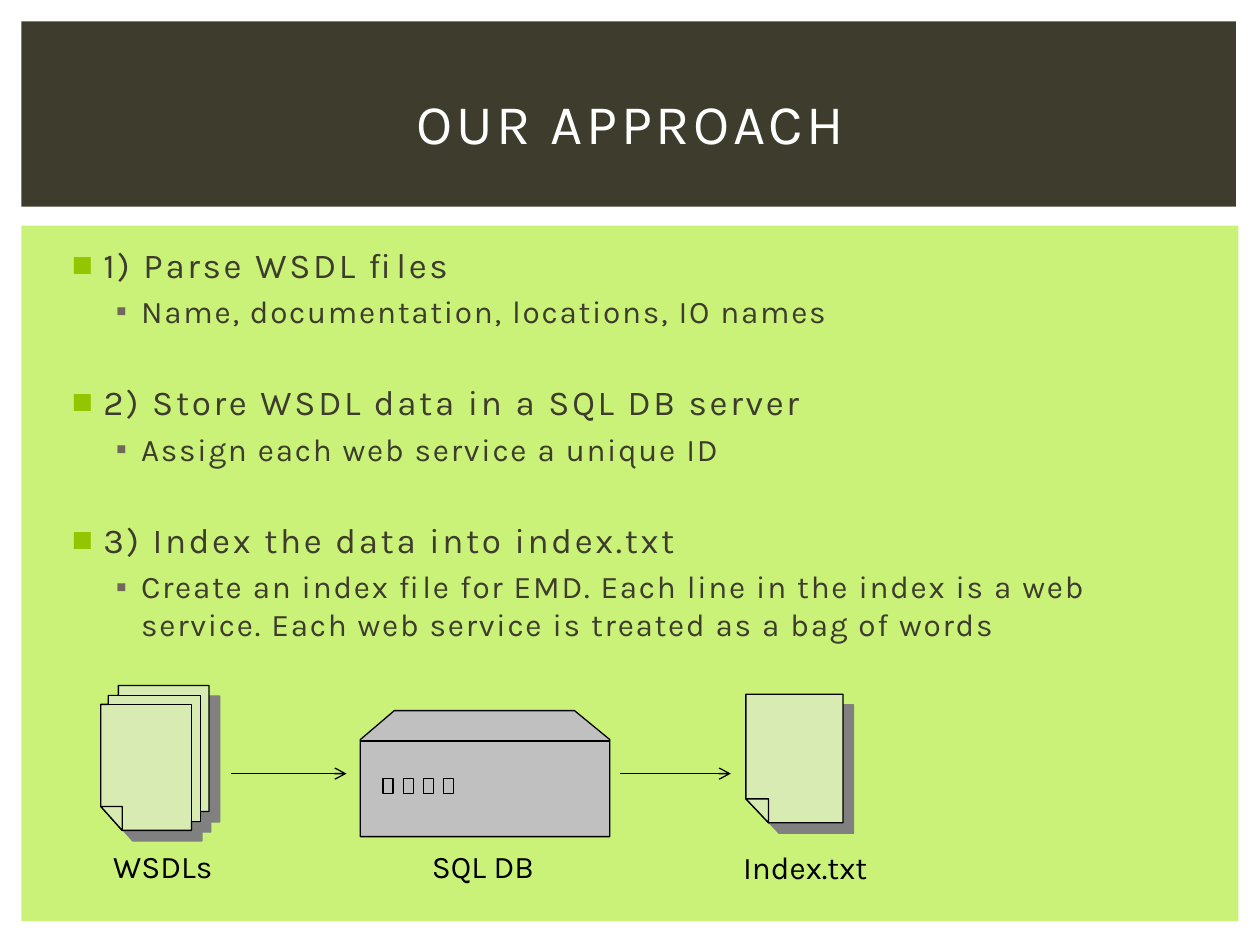
from dataclasses import dataclass
from typing import Optional

from lxml import etree
from pptx import Presentation
from pptx import util as u
from pptx.dml.color import RGBColor
from pptx.enum import shapes, text
from pptx.oxml import ns

COLORS = {
    "paper": "D8EBB3", "panel": "CAF278", "dark": "3E3D2D", "white": "FFFFFF",
    "black": "000000", "steel": "C0C0C0", "shadow": "808080",
    "bullet": "94C600", "sub_bullet": "71685A",
}
FONT = "Karla"
ARROW_Y = 6.14
Point = tuple[float, float]


@dataclass(frozen=True)
class Level:
    size: float
    spacing: float
    margin: float
    hanging: float
    mark: str
    color: str


@dataclass(frozen=True)
class Step:
    heading: str
    detail: str
    before: float


@dataclass(frozen=True)
class Outline:
    points: list[Point]
    fill: str
    shadow: bool = False


@dataclass(frozen=True)
class Label:
    words: str
    left: float
    top: float
    width: float


LEVELS = [
    Level(20, 1.5, 0.3, 0.25, "■", "bullet"),
    Level(18, 1, 0.6, 0.2, "▪", "sub_bullet"),
]
STEPS = [
    Step("1) Parse WSDL files", "Name, documentation, locations, IO names", 2),
    Step("2) Store WSDL data in a SQL DB server",
         "Assign each web service a unique ID", 29),
    Step("3) Index the data into index.txt",
         "Create an index file for EMD. Each line in the index is a web service. "
         "Each web service is treated as a bag of words", 29),
]
LABELS = [
    Label("WSDLs", 0.8, 6.67, 1.33),
    Label("SQL DB", 3.33, 6.67, 1.08),
    Label("Index.txt", 5.8, 6.68, 1.33),
]


def rectangle(left: float, top: float, width: float, height: float) -> list[Point]:
    right, bottom = left + width, top + height
    return [(left, top), (right, top), (right, bottom), (left, bottom)]


OUTLINES = [
    # Index file and its folded corner
    Outline([(6.1, 6.53), (5.92, 6.34), (5.92, 5.51), (6.69, 5.51), (6.69, 6.53)],
            "paper", True),
    Outline([(5.92, 6.34), (6.1, 6.34), (6.1, 6.53)], "paper"),
    # Server with its four lights
    Outline([(2.86, 5.87), (3.13, 5.64), (4.56, 5.64), (4.84, 5.87),
             (4.84, 6.64), (2.86, 6.64)], "steel"),
    *[Outline(rectangle(3.04 + 0.16 * i, 6.18, 0.08, 0.12), "steel") for i in range(4)],
    # Stack of WSDL files: silhouette, middle sheet, folded corner
    Outline([(0.8, 6.4), (0.8, 5.59), (0.86, 5.59), (0.86, 5.52), (0.94, 5.52),
             (0.94, 5.44), (1.66, 5.44), (1.66, 6.44), (1.59, 6.44), (1.59, 6.52),
             (1.52, 6.52), (1.52, 6.59), (0.97, 6.59)], "paper", True),
    Outline([(0.86, 5.52), (1.59, 5.52), (1.59, 6.52), (1.52, 6.52),
             (1.52, 5.59), (0.86, 5.59)], "paper"),
    Outline([(0.8, 6.4), (0.97, 6.4), (0.97, 6.59)], "paper"),
]


def rgb(name: str) -> RGBColor:
    return RGBColor.from_string(COLORS[name])


def write(para, words: str, *, size: float, color: str, spacing: float = 0) -> None:
    span = para.add_run()
    span.text = words
    span.font.name = FONT
    span.font.size = u.Pt(size)
    span.font.color.rgb = rgb(color)
    if spacing:
        span.font._element.set("spc", str(round(spacing * 100)))


def place(box, left: float, top: float, width: float, height: float) -> None:
    box.left, box.top = u.Inches(left), u.Inches(top)
    box.width, box.height = u.Inches(width), u.Inches(height)


def add_panel(page, left: float, top: float, width: float, height: float,
              color: str) -> None:
    """Draw a plain panel behind everything else."""
    panel = page.shapes.add_shape(
        shapes.MSO_SHAPE.RECTANGLE, u.Inches(left), u.Inches(top),
        u.Inches(width), u.Inches(height))
    panel.shadow.inherit = False
    panel.fill.solid()
    panel.fill.fore_color.rgb = rgb(color)
    panel.line.fill.background()
    page.shapes.element.insert(2, panel.element)


def add_item(para, words: str, depth: int, before: float) -> None:
    level = LEVELS[depth]
    para.level = depth
    para.space_before = u.Pt(before)
    props = para._p.get_or_add_pPr()
    props.set("marL", str(u.Inches(level.margin)))
    props.set("indent", str(-u.Inches(level.hanging)))
    tint = etree.SubElement(props, ns.qn("a:buClr"))
    etree.SubElement(tint, ns.qn("a:srgbClr"), val=COLORS[level.color])
    etree.SubElement(props, ns.qn("a:buChar"), char=level.mark)
    write(para, words, size=level.size, color="dark", spacing=level.spacing)


def add_outline(page, outline: Outline) -> None:
    start, *rest = [(u.Inches(x), u.Inches(y)) for x, y in outline.points]
    builder = page.shapes.build_freeform(*start)
    builder.add_line_segments(rest, close=True)
    shape = builder.convert_to_shape()
    shape.fill.solid()
    shape.fill.fore_color.rgb = rgb(outline.fill)
    shape.line.color.rgb = rgb("black")
    shape.line.width = u.Pt(0.75)
    shape.shadow.inherit = False
    if outline.shadow:
        effects = shape.element.spPr.find(ns.qn("a:effectLst"))
        cast = etree.SubElement(effects, ns.qn("a:outerShdw"), dist=str(u.Pt(8.5)),
                                dir=str(45 * 60000), algn="ctr", rotWithShape="0")
        etree.SubElement(cast, ns.qn("a:srgbClr"), val=COLORS["shadow"])


def add_line(page, left: float, right: float, y: float,
             head: Optional[str] = None) -> None:
    line = page.shapes.add_connector(
        shapes.MSO_CONNECTOR.STRAIGHT, u.Inches(left), u.Inches(y),
        u.Inches(right), u.Inches(y))
    line.line.color.rgb = rgb("black")
    line.line.width = u.Pt(0.75)
    if head:
        etree.SubElement(line.line._get_or_add_ln(), ns.qn("a:tailEnd"), type=head)
    etree.SubElement(line.element.spPr, ns.qn("a:effectLst"))


def add_label(page, label: Label) -> None:
    box = page.shapes.add_textbox(u.Inches(label.left), u.Inches(label.top),
                                  u.Inches(label.width), u.Inches(0.4))
    box.text_frame.word_wrap = True
    box.text_frame.auto_size = text.MSO_AUTO_SIZE.SHAPE_TO_FIT_TEXT
    write(box.text_frame.paragraphs[0], label.words, size=18, color="black")


def main() -> None:
    deck = Presentation()
    deck.slide_width, deck.slide_height = u.Inches(10), u.Inches(7.5)
    page = deck.slides.add_slide(deck.slide_layouts[1])
    add_panel(page, 0.17, 0.17, 9.64, 1.47, "dark")
    add_panel(page, 0.17, 1.79, 9.66, 5.52, "panel")

    title = page.shapes.title
    place(title, 0.42, 0.39, 9.17, 1.15)
    title.text_frame.vertical_anchor = text.MSO_ANCHOR.MIDDLE
    heading = title.text_frame.paragraphs[0]
    heading.alignment = text.PP_ALIGN.CENTER
    write(heading, "OUR APPROACH", size=32, color="white", spacing=2)

    body = page.placeholders[1]
    place(body, 0.42, 1.88, 9.19, 3.45)
    frame = body.text_frame
    frame.auto_size = text.MSO_AUTO_SIZE.NONE
    for number, step in enumerate(STEPS):
        para = frame.add_paragraph() if number else frame.paragraphs[0]
        add_item(para, step.heading, 0, step.before)
        add_item(frame.add_paragraph(), step.detail, 1, 4)

    for outline in OUTLINES:
        add_outline(page, outline)
    add_line(page, 2.86, 4.84, 5.88)
    for left, right in [(1.83, 2.75), (4.92, 5.8)]:
        add_line(page, left, right, ARROW_Y, head="arrow")
    for label in LABELS:
        add_label(page, label)
    deck.save("out.pptx")


if __name__ == "__main__":
    main()
